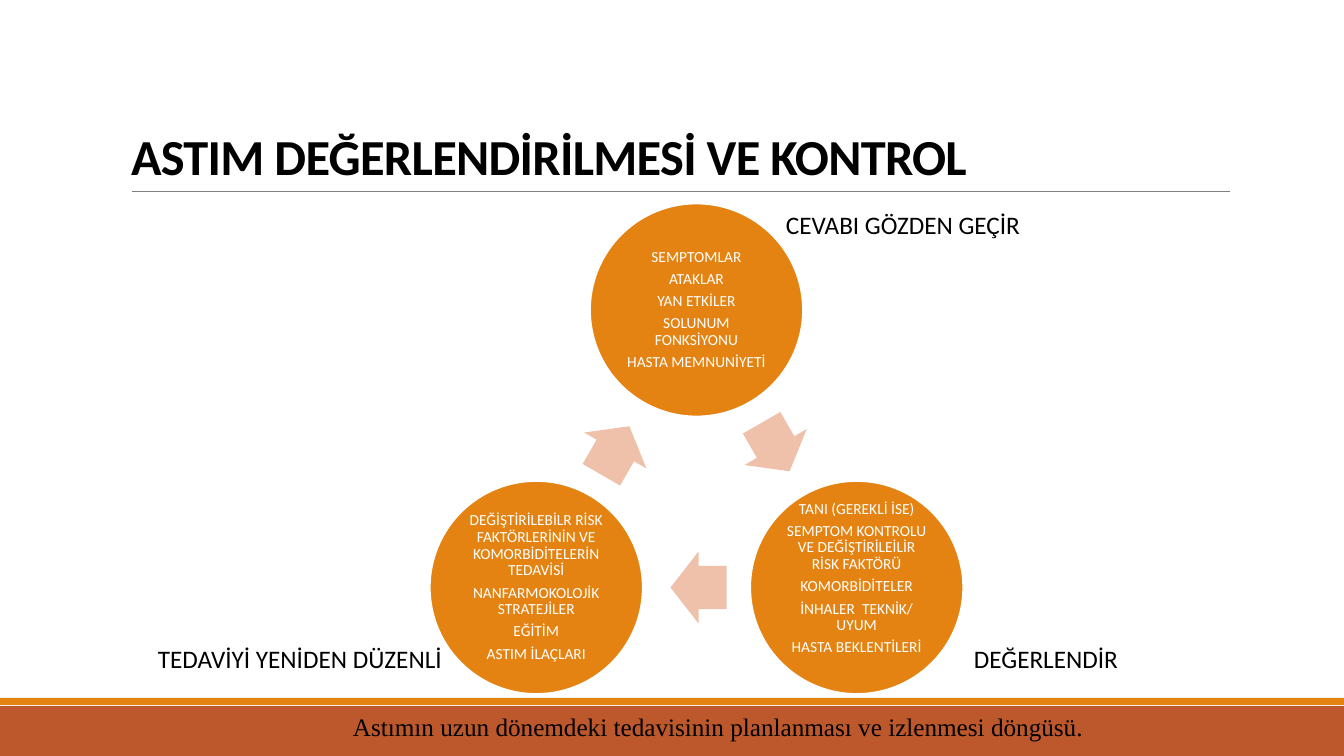
"""Builds the asthma assessment and control cycle slide."""
from math import cos, radians, sin

from pptx import Presentation
from pptx.dml.color import RGBColor
from pptx.enum.shapes import MSO_CONNECTOR as Connector, MSO_SHAPE as Preset
from pptx.enum.text import MSO_ANCHOR as Anchor, MSO_AUTO_SIZE as AutoSize, PP_ALIGN as Align
from pptx.oxml.ns import qn
from pptx.util import Pt

EMU_PER_PX = 12192000 / 1344
ORANGE = RGBColor(0xE4, 0x83, 0x12)
RUST = RGBColor(0xBD, 0x58, 0x2C)
PEACH = RGBColor(0xEF, 0xC1, 0xAB)
GRAY = RGBColor(0x80, 0x80, 0x80)
WHITE = RGBColor(0xFF, 0xFF, 0xFF)
BLACK = RGBColor(0, 0, 0)


def px(*lengths):
    return [round(length * EMU_PER_PX) for length in lengths]


class CycleSlide:
    font = "Calibri"

    def __init__(self, deck):
        self.slide = deck.slides.add_slide(deck.slide_layouts[5])
        self.shapes = self.slide.shapes

    def add_text(self, paragraph, text, size, color, font=None, bold=False):
        run = paragraph.add_run()
        run.text = text
        run.font.name = font or self.font
        run.font.size = Pt(size)
        run.font.bold = bold
        run.font.color.rgb = color
        return run

    def title(self, text, left, top, width, height):
        heading = self.shapes.title
        heading.left, heading.top, heading.width, heading.height = px(left, top, width, height)
        frame = heading.text_frame
        frame.auto_size = AutoSize.NONE
        frame.vertical_anchor = Anchor.BOTTOM
        paragraph = frame.paragraphs[0]
        paragraph.alignment = Align.LEFT
        paragraph.line_spacing = 0.85
        run = self.add_text(paragraph, text, 36, BLACK, bold=True)
        run.font._element.set("spc", "-50")

    def block(self, preset, left, top, width, height, fill):
        block = self.shapes.add_shape(preset, *px(left, top, width, height))
        block.shadow.inherit = False
        block.fill.solid()
        block.fill.fore_color.rgb = fill
        block.line.fill.background()
        return block

    def rule(self, left, right, y):
        rule = self.shapes.add_connector(Connector.STRAIGHT, *px(left, y, right, y))
        rule.line.color.rgb = GRAY
        rule.line.width = Pt(0.5)
        properties = rule._element.spPr
        properties.append(properties.makeelement(qn("a:effectLst"), {}))

    def circle(self, x, y, diameter, items, lift):
        circle = self.block(Preset.OVAL, x - diameter / 2, y - diameter / 2,
                            diameter, diameter, ORANGE)
        circle.line.color.rgb = WHITE
        circle.line.width = Pt(1.25)
        frame = circle.text_frame
        frame.word_wrap = True
        frame.vertical_anchor = Anchor.MIDDLE
        frame.margin_left, frame.margin_top, frame.margin_right, frame.margin_bottom = px(
            2, 2, 2, 2 + 2 * lift)
        for index, item in enumerate(items):
            paragraph = frame.add_paragraph() if index else frame.paragraphs[0]
            paragraph.alignment = Align.CENTER
            paragraph.line_spacing = 0.9
            paragraph.space_after = Pt(4)
            self.add_text(paragraph, item, 11, WHITE)

    def arrow(self, x, y, angle):
        width, height = 56, 72
        arrow = self.block(Preset.RIGHT_ARROW, x - width / 2, y - height / 2,
                           width, height, PEACH)
        arrow.adjustments[0] = 0.6
        arrow.adjustments[1] = 0.5
        arrow.rotation = angle

    def label(self, text, left, top, width, font=None):
        label = self.shapes.add_textbox(*px(left, top, width, 40))
        frame = label.text_frame
        frame.word_wrap = False
        frame.auto_size = AutoSize.SHAPE_TO_FIT_TEXT
        self.add_text(frame.paragraphs[0], text, 18, BLACK, font)


STEPS = [
    (["SEMPTOMLAR", "ATAKLAR", "YAN ETKİLER", "SOLUNUM FONKSİYONU",
      "HASTA MEMNUNİYETİ"], 0),
    (["TANI (GEREKLİ İSE)", "SEMPTOM KONTROLU VE DEĞİŞTİRİLEİLİR RİSK FAKTÖRÜ",
      "KOMORBİDİTELER", "İNHALER  TEKNİK/ UYUM", "HASTA BEKLENTİLERİ"], 9),
    (["DEĞİŞTİRİLEBİLR RİSK FAKTÖRLERİNİN VE KOMORBİDİTELERİN TEDAVİSİ",
      "NANFARMOKOLOJİK STRATEJİLER", "EĞİTİM", "ASTIM İLAÇLARI"], 0),
]
LABELS = [
    ("CEVABI GÖZDEN GEÇİR", 776, 204, 257),
    ("DEĞERLENDİR", 964, 638, 166),
    ("TEDAVİYİ YENİDEN DÜZENLİ", 148, 638, 307),
]


def main():
    deck = Presentation()
    deck.slide_width, deck.slide_height = px(1344, 756)
    page = CycleSlide(deck)
    page.block(Preset.RECTANGLE, 0, 706, 1344, 50, RUST)
    page.block(Preset.RECTANGLE, 0, 698, 1344, 7, ORANGE)
    page.rule(132, 1230, 191)
    page.title("ASTIM DEĞERLENDİRİLMESİ VE KONTROL", 121, 31, 1109, 160)

    center_x, center_y, radius, setback = 696.5, 495, 185, 2
    for index, (items, lift) in enumerate(STEPS):
        turn = 120 * index
        position, heading = radians(turn - 90), radians(turn + 60)
        page.circle(center_x + radius * cos(position), center_y + radius * sin(position),
                    213, items, lift)
        middle = radians(turn - 30)
        page.arrow(center_x + radius / 2 * cos(middle) - setback * cos(heading),
                   center_y + radius / 2 * sin(middle) - setback * sin(heading), turn + 60)

    for label in LABELS:
        page.label(*label)
    page.label("Astımın uzun dönemdeki tedavisinin planlanması ve izlenmesi döngüsü.",
               343, 706, 759, "Times New Roman")
    deck.save("out.pptx")


if __name__ == "__main__":
    main()
